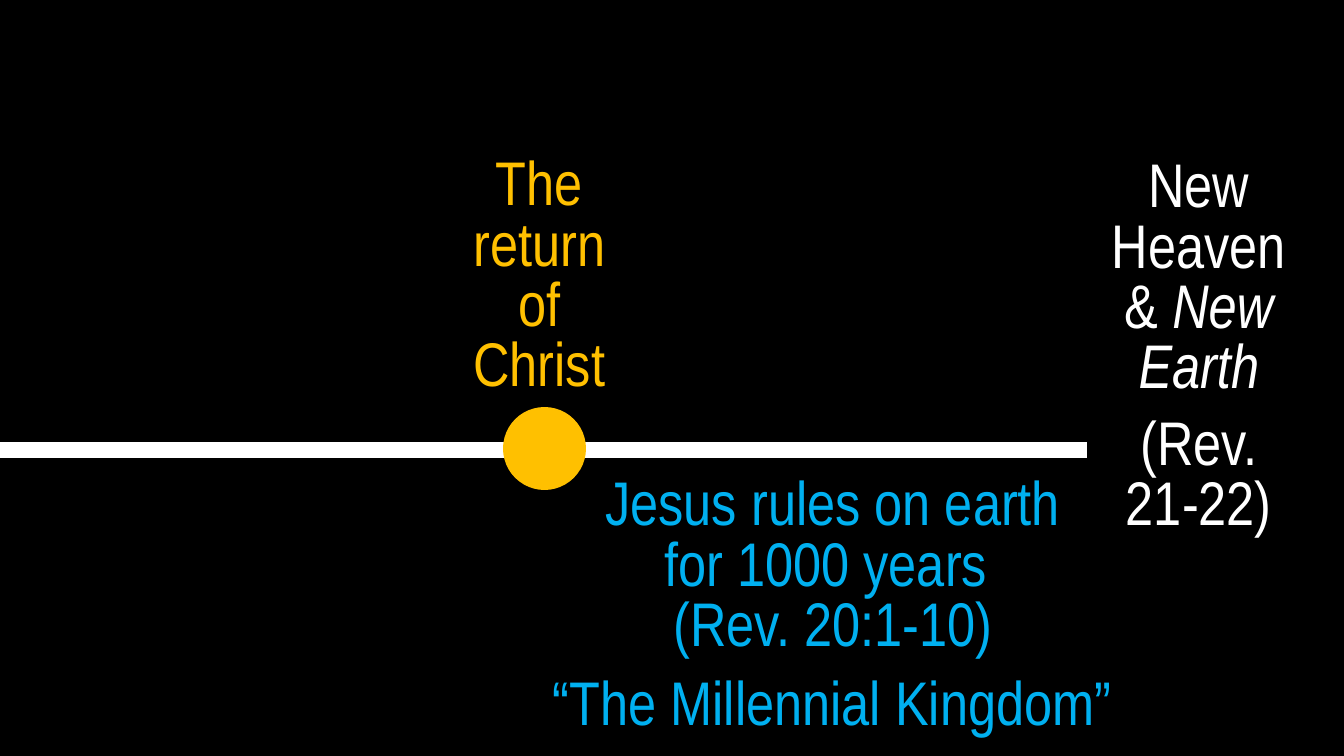
"""Build a timeline slide from the return of Christ to the new heaven and earth."""
from lxml.etree import SubElement
from pptx import Presentation
from pptx.dml.color import RGBColor
from pptx.enum.shapes import MSO_CONNECTOR as Connector, MSO_SHAPE as Shape
from pptx.enum.text import PP_ALIGN as Align
from pptx.oxml.ns import qn
from pptx.util import Emu, Pt

BLACK = RGBColor(0x00, 0x00, 0x00)
WHITE = RGBColor(0xFF, 0xFF, 0xFF)
GOLD = RGBColor(0xFF, 0xC0, 0x00)
BLUE = RGBColor(0x00, 0xB0, 0xF0)

SLIDE_SIZE = (1344, 756)
TIMELINE = (-18, 450, 1087, 450)
RETURN_MARKER = (503, 407, 83, 83)
LEFT_MARGIN = 4

LABELS = [
    ((440, 153, 195, 140), GOLD, [[("The return\nof Christ", False)]]),
    ((1085, 155, 224, 140), WHITE, [
        [("New Heaven & ", False), ("New Earth", True)],
        [("(Rev.\n21-22)", False)],
    ]),
    ((555, 473, 552, 140), BLUE, [
        [("Jesus rules on earth\nfor 1000 years \n(Rev. 20:1-10)", False)],
    ]),
    ((533, 673, 595, 68), BLUE, [[("“The Millennial Kingdom”", False)]]),
]
PARAGRAPH_FORMAT = {
    "alignment": Align.CENTER,
    "line_spacing": Pt(43),
    "space_after": Pt(12),
}
FONT_FORMAT = {"name": "Arial Narrow", "size": Pt(44)}


def px(length):
    return Emu(round(length * 914400 / 100.8))


def apply(target, values):
    for name, value in values.items():
        setattr(target, name, value)


def add_timeline(slide):
    line = slide.shapes.add_connector(Connector.STRAIGHT, *map(px, TIMELINE))
    line.line.color.rgb = WHITE
    line.line.width = Pt(12)
    SubElement(line._element.spPr, qn("a:effectLst"))


def add_marker(slide):
    marker = slide.shapes.add_shape(Shape.OVAL, *map(px, RETURN_MARKER))
    marker.shadow.inherit = False
    marker.fill.solid()
    marker.fill.fore_color.rgb = GOLD
    marker.line.fill.background()


def add_label(slide, area, color, paragraphs):
    frame = slide.shapes.add_textbox(*map(px, area)).text_frame
    frame.word_wrap = True
    for index, spans in enumerate(paragraphs):
        para = frame.add_paragraph() if index else frame.paragraphs[0]
        apply(para, PARAGRAPH_FORMAT)
        para._p.get_or_add_pPr().set("marL", str(px(LEFT_MARGIN)))
        for text, italic in spans:
            for row, words in enumerate(text.split("\n")):
                if row:
                    para.add_line_break()
                span = para.add_run()
                span.text = words
                apply(span.font, {**FONT_FORMAT, "italic": italic})
                span.font.color.rgb = color


def main():
    deck = Presentation()
    deck.slide_width, deck.slide_height = map(px, SLIDE_SIZE)
    slide = deck.slides.add_slide(deck.slide_layouts[6])
    slide.background.fill.solid()
    slide.background.fill.fore_color.rgb = BLACK
    add_timeline(slide)
    add_marker(slide)
    for label in LABELS:
        add_label(slide, *label)
    deck.save("out.pptx")


if __name__ == "__main__":
    main()
